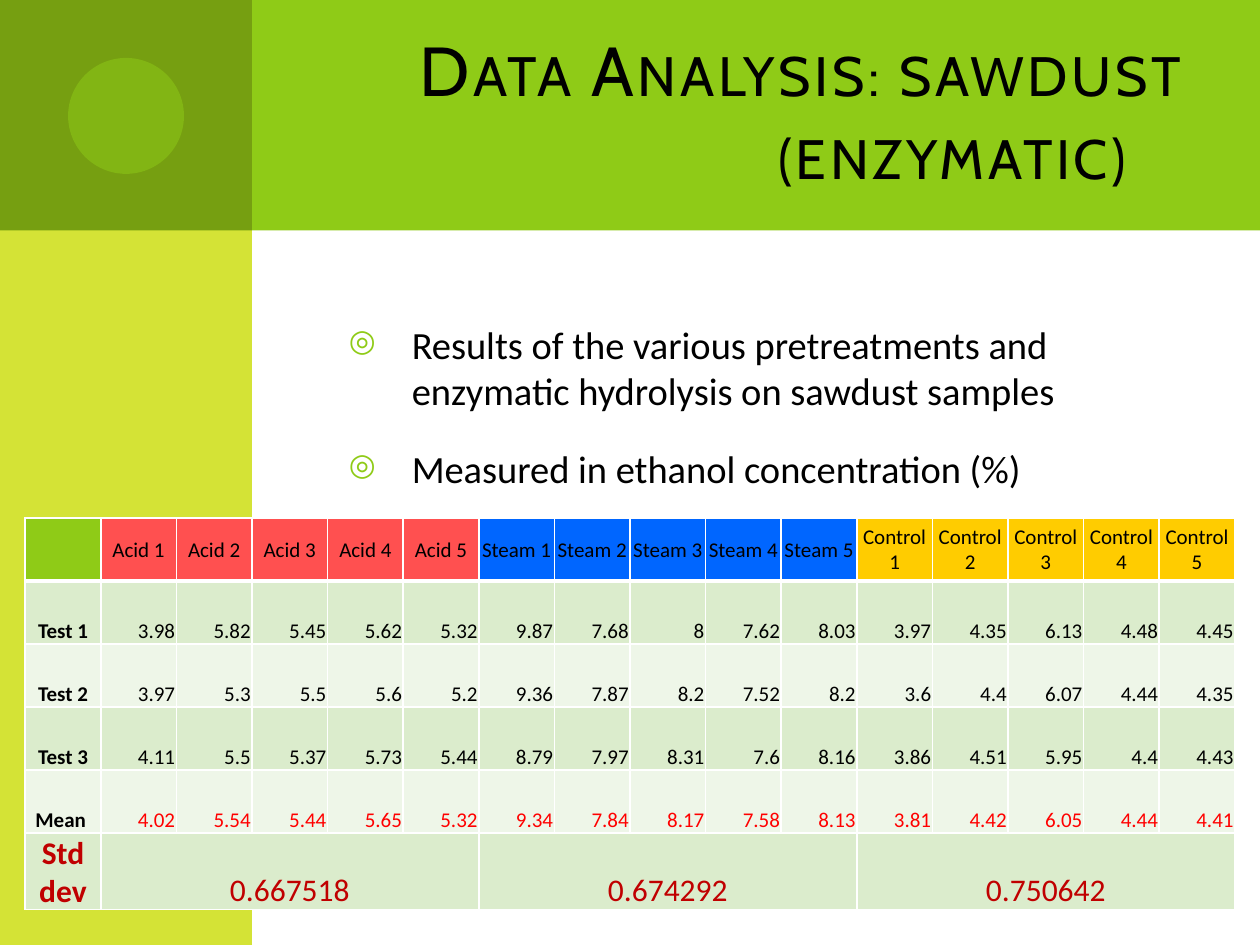
from lxml.etree import SubElement
from pptx import Presentation
from pptx.dml.color import RGBColor
from pptx.enum.shapes import MSO_SHAPE as Shape
from pptx.enum.text import MSO_ANCHOR as Anchor, PP_ALIGN as Align
from pptx.oxml.ns import qn
from pptx.util import Inches, Pt

COLORS = {
    "green": "8FCB17", "lime": "D4E336", "olive": "769F11", "black": "000000",
    "white": "FFFFFF", "acid": "FF5050", "steam": "0066FF", "control": "FFCC00",
    "band_dark": "DBECCC", "band_light": "EEF6E8", "red": "FF0000", "dark_red": "C00000",
}
GROUPS = {"Acid": "acid", "Steam": "steam", "Control": "control"}
SAMPLES = 5
RESULTS = {
    "Test 1": "3.98 5.82 5.45 5.62 5.32 9.87 7.68 8 7.62 8.03 3.97 4.35 6.13 4.48 4.45",
    "Test 2": "3.97 5.3 5.5 5.6 5.2 9.36 7.87 8.2 7.52 8.2 3.6 4.4 6.07 4.44 4.35",
    "Test 3": "4.11 5.5 5.37 5.73 5.44 8.79 7.97 8.31 7.6 8.16 3.86 4.51 5.95 4.4 4.43",
    "Mean ": "4.02 5.54 5.44 5.65 5.32 9.34 7.84 8.17 7.58 8.13 3.81 4.42 6.05 4.44 4.41",
}
DEVIATIONS = ["0.667518", "0.674292", "0.750642"]


def rgb(name):
    return RGBColor.from_string(COLORS[name])


def add_color(parent, name, **attributes):
    fill = SubElement(parent, qn("a:solidFill"))
    color = SubElement(fill, qn("a:srgbClr"), val=COLORS[name])
    for key, value in attributes.items():
        SubElement(color, qn(f"a:{key}"), val=value)


def write(paragraph, text, size=12, font="Calibri", color="black", bold=False, align=Align.LEFT):
    run = paragraph.add_run()
    run.text = text
    run.font.size = Pt(size)
    run.font.name = font
    run.font.bold = bold
    run.font.color.rgb = rgb(color)
    paragraph.alignment = align
    return run


class SlideBuilder:
    """Holds the style and the current slide, and adds each kind of element."""

    def __init__(self, slide):
        self.slide = slide
        self.inset = Inches(0.01)
        self.bullet = "◎"

    def block(self, left, top, width, height, color, kind=Shape.RECTANGLE, alpha=None):
        shape = self.slide.shapes.add_shape(
            kind, Inches(left), Inches(top), Inches(width), Inches(height))
        shape.shadow.inherit = False
        shape.line.fill.background()
        shape.fill.solid()
        shape.fill.fore_color.rgb = rgb(color)
        if alpha:
            color_element = shape.fill._xPr.find(qn("a:solidFill"))[0]
            SubElement(color_element, qn("a:alpha"), val=str(alpha * 1000))

    def text_frame(self, left, top, width, height, anchor=Anchor.TOP):
        shape = self.slide.shapes.add_textbox(
            Inches(left), Inches(top), Inches(width), Inches(height))
        frame = shape.text_frame
        frame.word_wrap = True
        frame.vertical_anchor = anchor
        return frame

    def title(self, text):
        frame = self.text_frame(2.48, 0.25, 7.02, 1.25, Anchor.MIDDLE)
        run = write(frame.paragraphs[0], text, size=39.6, font="Cabin", align=Align.RIGHT)
        properties = run.font._element
        properties.set("cap", "small")
        properties.set("spc", "200")

    def bullets(self, items):
        frame = self.text_frame(2.67, 2.5, 6.83, 4.2)
        for index, item in enumerate(items):
            paragraph = frame.add_paragraph() if index else frame.paragraphs[0]
            write(paragraph, item, size=22)
            paragraph.space_before = Pt(18)
            properties = paragraph._p.get_or_add_pPr()
            properties.set("marL", str(Inches(0.5)))
            properties.set("indent", str(-Inches(0.5)))
            bullet_color = SubElement(properties, qn("a:buClr"))
            SubElement(bullet_color, qn("a:srgbClr"), val=COLORS["green"])
            SubElement(properties, qn("a:buSzPct"), val="80000")
            SubElement(properties, qn("a:buChar"), char=self.bullet)

    def table(self, left, top, rows, columns, column_width, row_height):
        frame = self.slide.shapes.add_table(
            rows, columns, Inches(left), Inches(top),
            Inches(column_width * columns), Inches(row_height * rows))
        return frame.table

    def cell(self, cell, fill, text="", anchor=Anchor.BOTTOM, top=1, bottom=1, **style):
        cell.margin_left = cell.margin_right = cell.margin_top = self.inset
        cell.margin_bottom = 0
        cell.vertical_anchor = anchor
        properties = cell._tc.get_or_add_tcPr()
        for side, width in (("L", 1), ("R", 1), ("T", top), ("B", bottom)):
            line = SubElement(properties, qn(f"a:ln{side}"), w=str(Pt(width)))
            add_color(line, "white")
        cell.fill.solid()
        cell.fill.fore_color.rgb = rgb(fill)
        if text:
            write(cell.text_frame.paragraphs[0], text, **style)


def fill_results(builder):
    columns = 1 + SAMPLES * len(GROUPS)
    last = len(RESULTS) + 1
    table = builder.table(0.2, 4.11, last + 1, columns, 0.6, 0.5)
    header = [("", "green")] + [
        (f"{group} {number}", color)
        for group, color in GROUPS.items() for number in range(1, SAMPLES + 1)]
    for column, (text, color) in enumerate(header):
        builder.cell(table.cell(0, column), color, text, Anchor.MIDDLE, bottom=3, align=Align.CENTER)

    for row, (label, values) in enumerate(RESULTS.items(), 1):
        band = "band_dark" if row % 2 else "band_light"
        top = 3 if row == 1 else 1
        value_color = "red" if label == "Mean " else "black"
        builder.cell(table.cell(row, 0), band, label, top=top, bold=True, align=Align.CENTER)
        for column, value in enumerate(values.split(), 1):
            builder.cell(table.cell(row, column), band, value, top=top,
                         color=value_color, align=Align.RIGHT)

    summary = {0: "Std dev"}
    for index, value in enumerate(DEVIATIONS):
        first = 1 + index * SAMPLES
        summary[first] = value
        table.cell(last, first).merge(table.cell(last, first + SAMPLES - 1))
    for column in range(columns):
        builder.cell(table.cell(last, column), "band_dark", summary.get(column, ""),
                     size=18, color="dark_red", bold=column == 0, align=Align.CENTER)


def main():
    presentation = Presentation()
    presentation.slide_width, presentation.slide_height = Inches(10), Inches(7.5)
    builder = SlideBuilder(presentation.slides.add_slide(presentation.slide_layouts[6]))
    builder.block(0.5, 0, 9.5, 1.83, "green")
    builder.block(0, 0, 2, 7.5, "lime")
    builder.block(0, 0, 2, 1.83, "olive")
    builder.block(0.54, 0.46, 0.92, 0.92, "green", Shape.OVAL, alpha=50)
    builder.title("Data Analysis: sawdust (enzymatic) ")
    builder.bullets([
        "Results of the various pretreatments and enzymatic hydrolysis on sawdust samples",
        "Measured in ethanol concentration (%)",
    ])
    fill_results(builder)
    presentation.save("out.pptx")


if __name__ == "__main__":
    main()
